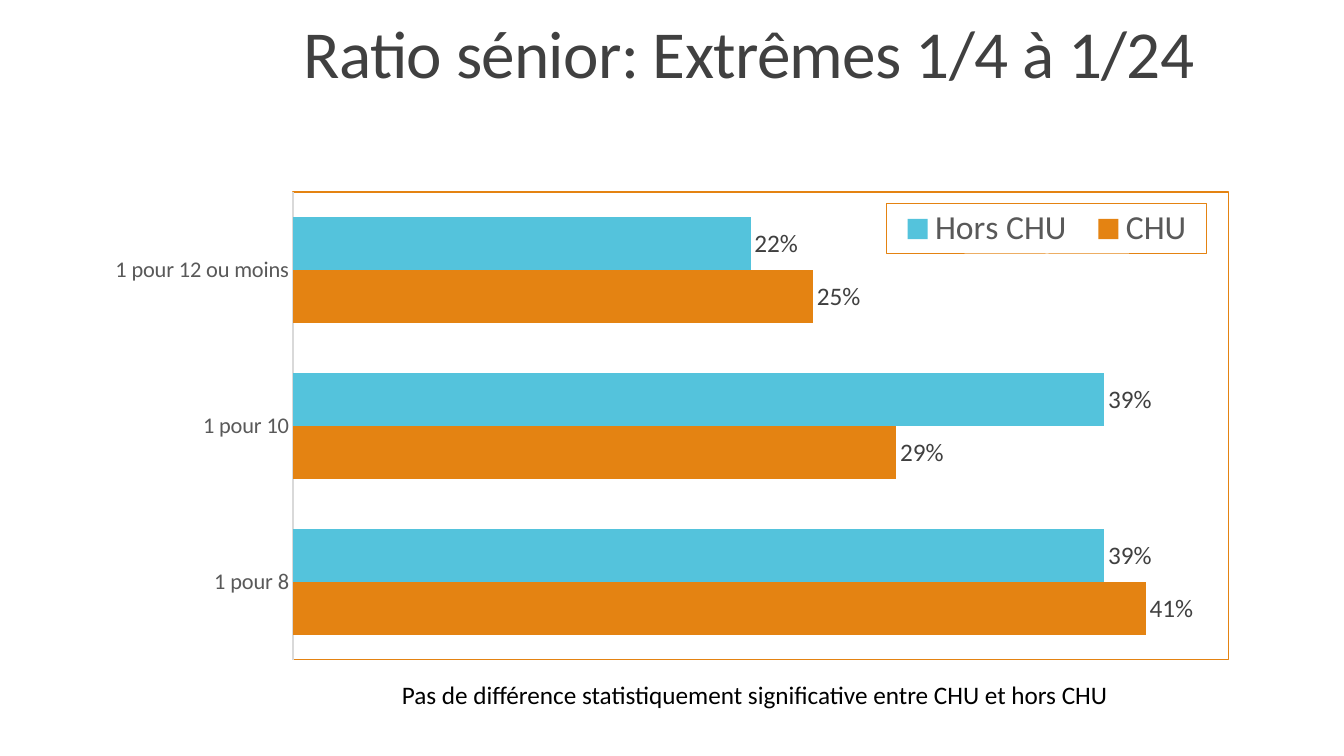
from dataclasses import dataclass

from lxml.etree import SubElement
from pptx import Presentation
from pptx.chart.data import CategoryChartData
from pptx.dml.color import RGBColor
from pptx.enum.chart import XL_CHART_TYPE, XL_LABEL_POSITION, XL_LEGEND_POSITION, XL_TICK_MARK
from pptx.enum.text import MSO_ANCHOR
from pptx.oxml import parse_xml
from pptx.oxml.ns import nsdecls, qn
from pptx.util import Emu, Pt

# Content
TITLE = "Ratio sénior: Extrêmes 1/4 à 1/24"
NOTE = "Pas de différence statistiquement significative entre CHU et hors CHU"
CATEGORIES = ["1 pour 8", "1 pour 10", "1 pour 12 ou moins"]
SERIES = {"CHU": (0.41, 0.29, 0.25), "Hors CHU": (0.39, 0.39, 0.22)}

# Places in px: left, top, width, height
PAGE = (1344, 756)
TITLE_BOX = (294, 19, 1050, 158)
CHART_BOX = (93, 120, 1159, 549)
PLOT_BOX = (293, 192, 936, 468)
LEGEND_BOX = (887, 204, 320, 50)
NOTE_BOX = (392, 674, 823, 40)


@dataclass(frozen=True)
class Theme:
    font: str = "Calibri"
    dark: str = "404040"
    grey: str = "595959"
    black: str = "000000"
    rule: str = "D9D9D9"
    orange: str = "E48312"
    blue: str = "54C3DC"
    title: int = 48
    legend: int = 24
    label: int = 18
    category: int = 16


THEME = Theme()


def px(length):
    return Emu(length * 914400 * 10 // 1008)


def style(font, size, color):
    font.name, font.size = THEME.font, Pt(size)
    font.color.rgb = RGBColor.from_string(color)


def add_text(page, place, words, size, color):
    box = page.shapes.add_textbox(*map(px, place))
    box.text_frame.word_wrap = True
    box.text_frame.vertical_anchor = MSO_ANCHOR.TOP
    para = box.text_frame.paragraphs[0]
    span = para.add_run()
    span.text = words
    style(span.font, size, color)
    return para, span


def set_layout(element, place, target=None):
    """Fix a chart part at its place, as fractions of the chart box."""
    for old in element.findall(qn("c:layout")):
        element.remove(old)
    layout = parse_xml(f"<c:layout {nsdecls('c')}/>")
    manual = SubElement(layout, qn("c:manualLayout"))
    left, top, width, height = CHART_BOX
    values = {"xMode": "edge", "yMode": "edge",
              "x": (place[0] - left) / width, "y": (place[1] - top) / height,
              "w": place[2] / width, "h": place[3] / height}
    if target:
        values = {"layoutTarget": target, **values}
    for name, value in values.items():
        SubElement(manual, qn(f"c:{name}")).set("val", str(value))
    return layout


def add_outline(element):
    element.append(parse_xml(
        f'<c:spPr {nsdecls("c", "a")}><a:noFill/><a:ln w="9525"><a:solidFill>'
        f'<a:srgbClr val="{THEME.orange}"/></a:solidFill></a:ln></c:spPr>'))


def add_ratio_chart(page):
    data = CategoryChartData(number_format="0%")
    data.categories = CATEGORIES
    for name, values in SERIES.items():
        data.add_series(name, values)
    chart = page.shapes.add_chart(
        XL_CHART_TYPE.BAR_CLUSTERED, *map(px, CHART_BOX), data).chart
    chart.has_title = False
    style(chart.font, THEME.category, THEME.grey)

    # Bars and their labels
    plot = chart.plots[0]
    plot.gap_width, plot.overlap, plot.vary_by_categories = 95, 0, False
    for series, color in zip(plot.series, (THEME.orange, THEME.blue)):
        series.format.fill.solid()
        series.format.fill.fore_color.rgb = RGBColor.from_string(color)
        labels = series.data_labels
        labels.show_value = True
        labels.number_format, labels.number_format_is_linked = "0%", False
        labels.position = XL_LABEL_POSITION.OUTSIDE_END
        style(labels.font, THEME.label, THEME.dark)

    # Axes
    names = chart.category_axis
    names.major_tick_mark = XL_TICK_MARK.NONE
    names.format.line.color.rgb = RGBColor.from_string(THEME.rule)
    names.format.line.width = Pt(0.75)
    style(names.tick_labels.font, THEME.category, THEME.grey)
    scale = chart.value_axis
    scale.minimum_scale, scale.maximum_scale = 0, 0.45
    scale.has_major_gridlines = False
    scale.visible = False

    # Framed plot and legend
    chart.has_legend = True
    legend = chart.legend
    legend.position = XL_LEGEND_POSITION.TOP
    legend.include_in_layout = True
    area = chart.element.find(".//" + qn("c:plotArea"))
    area.insert(0, set_layout(area, PLOT_BOX, "inner"))
    add_outline(area)
    key = chart.element.find(".//" + qn("c:legend"))
    key.find(qn("c:legendPos")).addnext(set_layout(key, LEGEND_BOX))
    add_outline(key)
    style(legend.font, THEME.legend, THEME.grey)


def main():
    deck = Presentation()
    deck.slide_width, deck.slide_height = map(px, PAGE)
    page = deck.slides.add_slide(deck.slide_layouts[6])

    # Title
    para, span = add_text(page, TITLE_BOX, TITLE, THEME.title, THEME.dark)
    para.line_spacing = 0.85
    span.font.element.set("spc", "-50") if hasattr(span.font, "element") else \
        span.font._element.set("spc", "-50")

    add_ratio_chart(page)
    add_text(page, NOTE_BOX, NOTE, THEME.label, THEME.black)
    deck.save("out.pptx")


if __name__ == "__main__":
    main()
